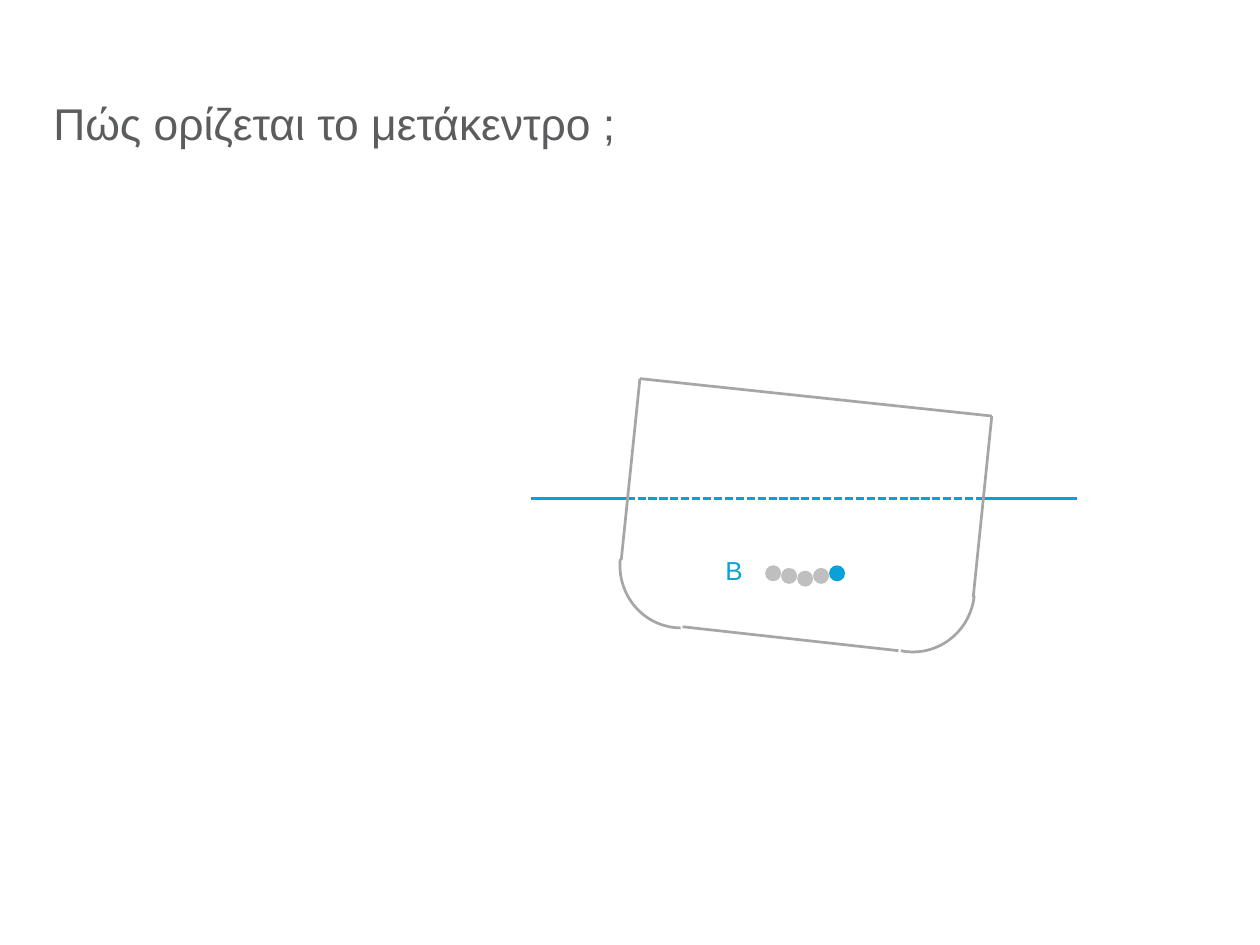
from lxml import etree
from pptx import Presentation
from pptx.dml.color import RGBColor
from pptx.enum.dml import MSO_LINE as Dash
from pptx.enum.shapes import MSO_CONNECTOR as Link, MSO_SHAPE as Kind
from pptx.enum.text import MSO_ANCHOR as Anchor, MSO_AUTO_SIZE as Fit, PP_ALIGN as Align
from pptx.oxml.ns import qn
from pptx.util import Inches, Pt

BLUE = RGBColor(0x08, 0xA1, 0xD9)
GRAY = RGBColor(0xA6, 0xA6, 0xA6)
PALE = RGBColor(0xBF, 0xBF, 0xBF)
DARK = RGBColor(0x5B, 0x5C, 0x5E)
GRID = 576


def place(shape, x, y, w, h):
    shape.left, shape.top = Inches(x), Inches(y)
    shape.width, shape.height = Inches(w), Inches(h)


def write(shape, text, size, color, anchor):
    frame = shape.text_frame
    frame.text = text
    frame.word_wrap = True
    frame.auto_size = Fit.NONE
    frame.vertical_anchor = anchor
    frame.margin_left = frame.margin_right = 0
    frame.margin_top = frame.margin_bottom = 0
    para = frame.paragraphs[0]
    para.alignment = Align.LEFT
    para.font.name = "Arial"
    para.font.size = Pt(size)
    para.font.color.rgb = color
    return para


def add_line(shapes, start, end, color, width):
    line = shapes.add_connector(Link.STRAIGHT, *map(Inches, start + end))
    line.line.color.rgb = color
    line.line.width = Pt(width)
    etree.SubElement(line._element.spPr, qn("a:effectLst"))
    return line


def add_title(slide, x, y, w, h):
    title = slide.shapes.title
    place(title, x, y, w, h)
    para = write(title, "Πώς ορίζεται το μετάκεντρο ;", 12, DARK, Anchor.MIDDLE)
    para.line_spacing = 1.25


def add_water(slide, x, y, w):
    side = 0.36
    left, right = x + side, x + w - side
    inner = add_line(slide.shapes, (left, y), (right, y), BLUE, 0.75)
    inner.line.dash_style = Dash.SQUARE_DOT
    for start, end in ((x, left), (right, x + w)):
        add_line(slide.shapes, (start, y), (end, y), BLUE, 1)


def add_hull(slide, x, y):
    shapes = slide.shapes.add_group_shape().shapes
    port, star = (x + 0.08, y), (x + 1.4, y + 0.14)
    edges = (
        (port, star),
        (port, (x + 0.01, y + 0.68)),
        (star, (x + 1.33, y + 0.82)),
        ((x + 0.24, y + 0.93), (x + 1.05, y + 1.02)),
    )
    for start, end in edges:
        add_line(shapes, start, end, GRAY, 0.75)
    for dx, dy, turn, flip in ((0.87, 0.56, 96, False), (0, 0.47, 276, True)):
        bilge = shapes.add_shape(
            Kind.ARC, Inches(x + dx), Inches(y + dy), Inches(0.47), Inches(0.46))
        bilge.adjustments[0] = 162
        bilge.adjustments[1] = 3.26
        bilge.rotation = turn
        if flip:
            bilge._element.spPr.xfrm.set("flipH", "1")
        bilge.shadow.inherit = False
        bilge.fill.background()
        bilge.line.color.rgb = GRAY
        bilge.line.width = Pt(0.75)


def add_center(slide, x, y):
    label = slide.shapes.add_textbox(
        Inches(x), Inches(y), Inches(0.18), Inches(0.18))
    write(label, "B", 7, BLUE, Anchor.TOP)
    count, size = 5, 0.06
    mid = count // 2
    for i in range(count):
        dip = 0.01 * (mid - abs(i - mid))
        dot = slide.shapes.add_shape(
            Kind.OVAL, Inches(x + 0.15 + i * size), Inches(y + 0.04 + dip),
            Inches(size), Inches(size))
        dot.shadow.inherit = False
        dot.fill.solid()
        dot.fill.fore_color.rgb = BLUE if i == count - 1 else PALE
        dot.line.fill.background()


def main():
    deck = Presentation()
    deck.slide_width, deck.slide_height = Inches(2722 / GRID), Inches(2041 / GRID)
    slide = deck.slides.add_slide(deck.slide_layouts[5])
    add_title(slide, 0.2, 0.2, 4.33, 0.47)
    add_water(slide, 1.99, 1.87, 2.05)
    add_hull(slide, 2.32, 1.42)
    add_center(slide, 2.72, 2.08)
    deck.save("out.pptx")


if __name__ == "__main__":
    main()
